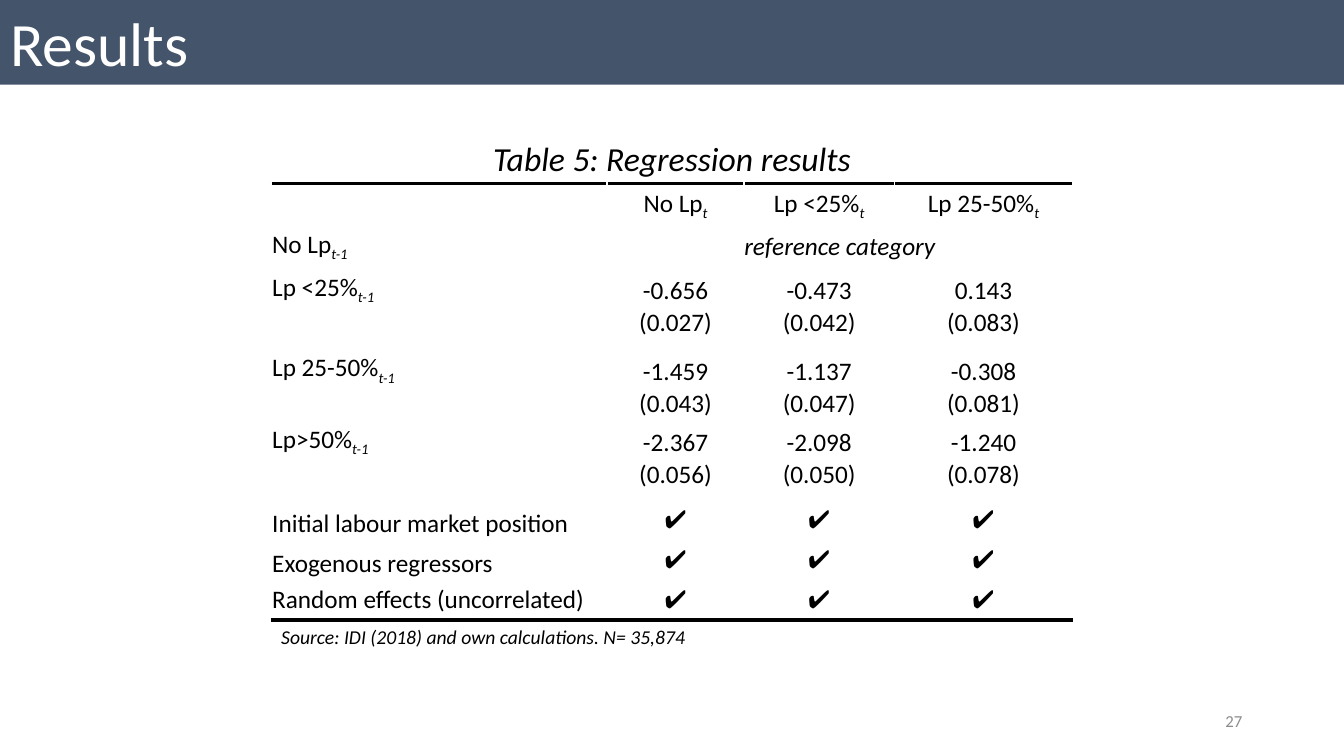
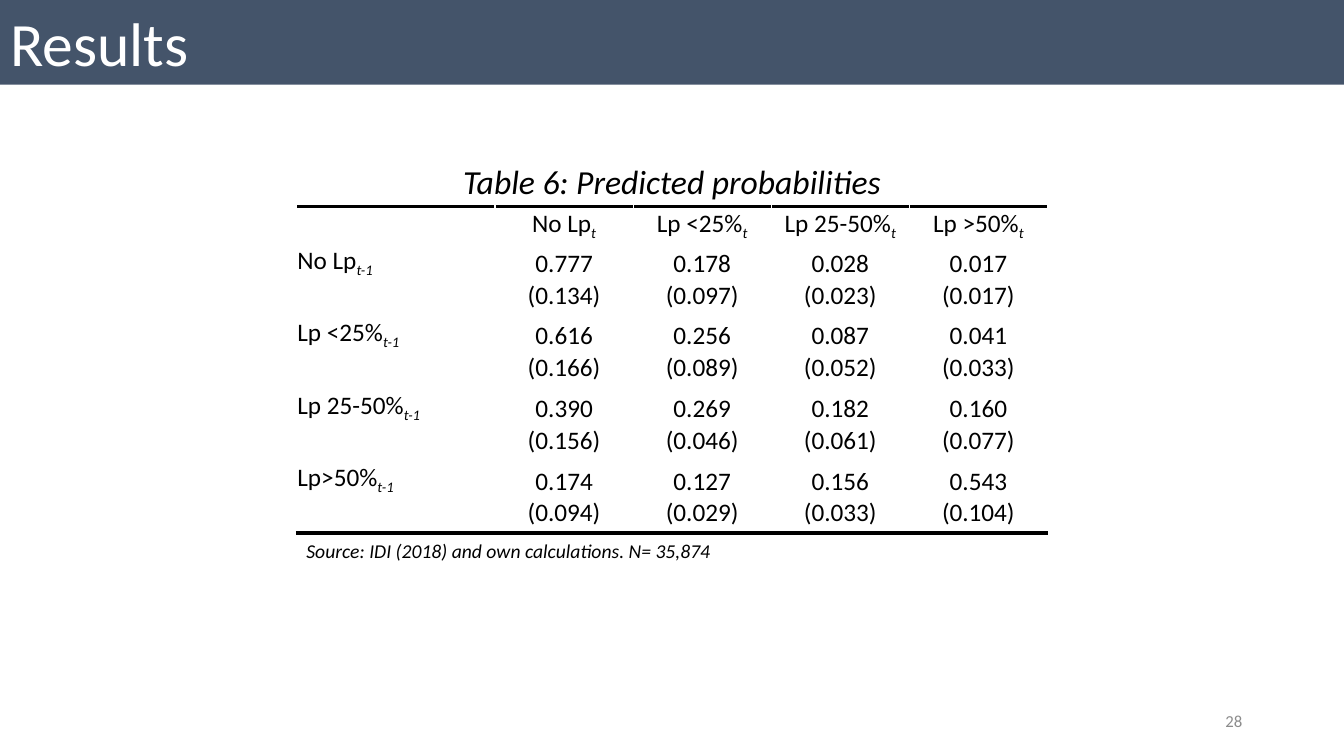
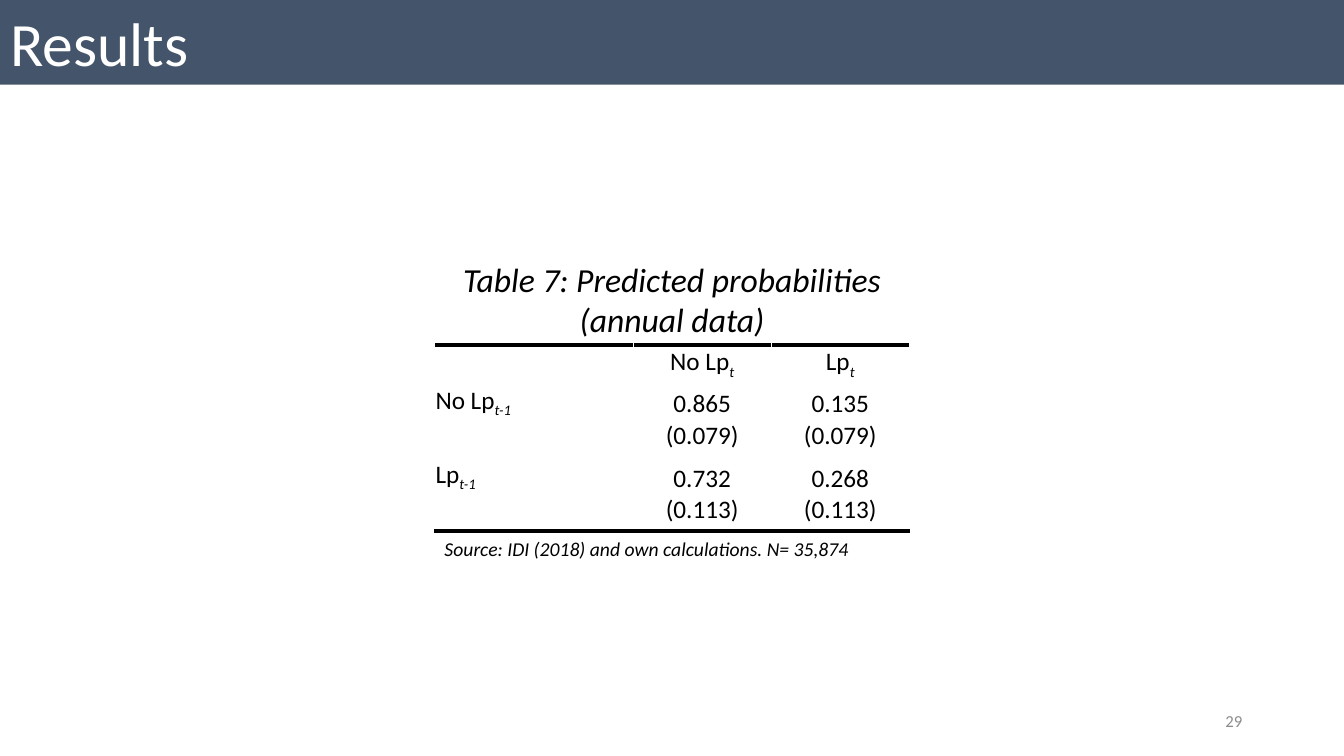
import dataclasses

import lxml.etree
import pptx
import pptx.dml.color
import pptx.enum.text
import pptx.oxml.ns
import pptx.util

Inches = pptx.util.Inches
Align = pptx.enum.text.PP_ALIGN
Anchor = pptx.enum.text.MSO_ANCHOR
qn = pptx.oxml.ns.qn


@dataclasses.dataclass(frozen=True)
class Theme:
    font: str = "Calibri"
    band: str = "44546A"
    white: str = "FFFFFF"
    black: str = "000000"
    grey: str = "8C8C8C"
    title: int = 44
    caption: int = 24
    body: int = 18
    source: int = 14
    number: int = 12


theme = Theme()
rgb = pptx.dml.color.RGBColor.from_string


def style(para, size, color, align=Align.LEFT, italic=False):
    para.alignment = align
    font = para.font
    font.name = theme.font
    font.size = pptx.util.Pt(size)
    font.color.rgb = rgb(color)
    font.bold = False
    font.italic = italic


def border(cell, heavy):
    """Draw thin white edges, with a thick black one on the heavy side."""
    props = cell._tc.get_or_add_tcPr()
    for side in ("lnL", "lnR", "lnT", "lnB"):
        width, color = (3, theme.black) if side == heavy else (1, theme.white)
        line = lxml.etree.SubElement(props, qn(f"a:{side}"), w=str(pptx.util.Pt(width)))
        fill = lxml.etree.SubElement(line, qn("a:solidFill"))
        lxml.etree.SubElement(fill, qn("a:srgbClr"), val=color)


# Anchors of the label and of the values in each kind of row
kinds = {
    "head": (Anchor.MIDDLE, Anchor.MIDDLE),
    "ref": (Anchor.MIDDLE, Anchor.MIDDLE),
    "mean": (Anchor.BOTTOM, Anchor.BOTTOM),
    "error": (Anchor.TOP, Anchor.TOP),
    "tick": (Anchor.BOTTOM, Anchor.MIDDLE),
    "last": (Anchor.MIDDLE, Anchor.MIDDLE),
}

# Each page: number, caption, caption height, table top, column widths, row
# heights, and rows of kind and cells; "_" starts a subscript
pages = [
    (27, "Table 5: Regression results", 0.5, 1.82,
     [3.33, 1.36, 1.49, 1.77],
     [0.42, 0.4, 0.4, 0.33, 0.47, 0.34, 0.37, 0.4, 0.4, 0.4, 0.4],
     [("head", "", "No Lp_t", "Lp <25%_t", "Lp 25-50%_t"),
      ("ref", "No Lp_t-1", "reference category"),
      ("mean", "Lp <25%_t-1", "-0.656", "-0.473", "0.143"),
      ("error", "", "(0.027)", "(0.042)", "(0.083)"),
      ("mean", "Lp 25-50%_t-1", "-1.459", "-1.137", "-0.308"),
      ("error", "", "(0.043)", "(0.047)", "(0.081)"),
      ("mean", "Lp>50%_t-1", "-2.367", "-2.098", "-1.240"),
      ("error", "", "(0.056)", "(0.050)", "(0.078)"),
      ("tick", "Initial labour market position", "✔", "✔", "✔"),
      ("tick", "Exogenous regressors", "✔", "✔", "✔"),
      ("last", "Random effects (uncorrelated)", "✔", "✔", "✔")]),
    (28, "Table 6: Predicted probabilities", 0.5, 2.05,
     [1.97] + [1.37] * 4,
     [0.36] * 9,
     [("head", "", "No Lp_t", "Lp <25%_t", "Lp 25-50%_t", "Lp >50%_t"),
      ("mean", "No Lp_t-1", "0.777", "0.178", "0.028", "0.017"),
      ("error", "", "(0.134)", "(0.097)", "(0.023)", "(0.017)"),
      ("mean", "Lp <25%_t-1", "0.616", "0.256", "0.087", "0.041"),
      ("error", "", "(0.166)", "(0.089)", "(0.052)", "(0.033)"),
      ("mean", "Lp 25-50%_t-1", "0.390", "0.269", "0.182", "0.160"),
      ("error", "", "(0.156)", "(0.046)", "(0.061)", "(0.077)"),
      ("mean", "Lp>50%_t-1", "0.174", "0.127", "0.156", "0.543"),
      ("error", "", "(0.094)", "(0.029)", "(0.033)", "(0.104)")]),
    (29, "Table 7: Predicted probabilities\v(annual data)", 0.91, 3.42,
     [1.97] + [1.37] * 2,
     [0.37] * 5,
     [("head", "", "No Lp_t", "Lp_t"),
      ("mean", "No Lp_t-1", "0.865", "0.135"),
      ("error", "", "(0.079)", "(0.079)"),
      ("mean", "Lp_t-1", "0.732", "0.268"),
      ("error", "", "(0.113)", "(0.113)")]),
]

wide = 13.33
deck = pptx.Presentation()
deck.slide_width = Inches(wide)
deck.slide_height = Inches(7.5)

for number, caption, rise, top, widths, heights, rows in pages:
    slide = deck.slides.add_slide(deck.slide_layouts[5])
    title = slide.shapes.title
    title.left, title.top = 0, 0
    title.width, title.height = Inches(wide), Inches(0.84)
    title.fill.solid()
    title.fill.fore_color.rgb = rgb(theme.band)
    frame = title.text_frame
    frame.text = "Results"
    frame.auto_size = pptx.enum.text.MSO_AUTO_SIZE.NONE
    frame.vertical_anchor = Anchor.TOP
    style(frame.paragraphs[0], theme.title, theme.white)

    span, depth = sum(widths), sum(heights)
    left = (wide - span) / 2
    table = slide.shapes.add_table(
        len(rows), len(widths), Inches(left), Inches(top), Inches(span), Inches(depth)
    ).table
    table.first_row = table.horz_banding = False
    for column, width in zip(table.columns, widths):
        column.width = Inches(width)

    for r, (kind, *texts) in enumerate(rows):
        table.rows[r].height = Inches(heights[r])
        for c in range(len(widths)):
            cell = table.cell(r, c)
            if r == 0:
                border(cell, "lnT")
            elif r == len(rows) - 1:
                border(cell, "lnB")
            cell.fill.solid()
            cell.fill.fore_color.rgb = rgb(theme.white)
            cell.margin_left = cell.margin_right = cell.margin_top = Inches(0.01)
            cell.margin_bottom = 0
            cell.vertical_anchor = kinds[kind][c > 0]
            para = cell.text_frame.paragraphs[0]
            style(para, theme.body, theme.black,
                  Align.CENTER if c else Align.LEFT, kind == "ref" and c > 0)
            if c < len(texts) and texts[c]:
                base, _, sub = texts[c].partition("_")
                para.add_run().text = base
                if sub:
                    run = para.add_run()
                    run.text = sub
                    run.font.italic = True
                    run._r.get_or_add_rPr().set("baseline", "-25000")
        if kind == "ref":
            table.cell(r, 1).merge(table.cell(r, len(widths) - 1))

    source = "Source: IDI (2018) and own calculations. N= 35,874"
    notes = [
        (caption, (left, top - rise, span, rise), theme.caption, theme.black, Align.CENTER, True),
        (source, (left, top + depth, 4.25, 0.34), theme.source, theme.black, Align.LEFT, True),
        (str(number), (9.42, 6.95, 3, 0.4), theme.number, theme.grey, Align.RIGHT, False),
    ]
    for text, place, size, color, align, italic in notes:
        frame = slide.shapes.add_textbox(*map(Inches, place)).text_frame
        frame.word_wrap = True
        frame.vertical_anchor = Anchor.MIDDLE
        frame.text = text
        style(frame.paragraphs[0], size, color, align, italic)

deck.save("out.pptx")
